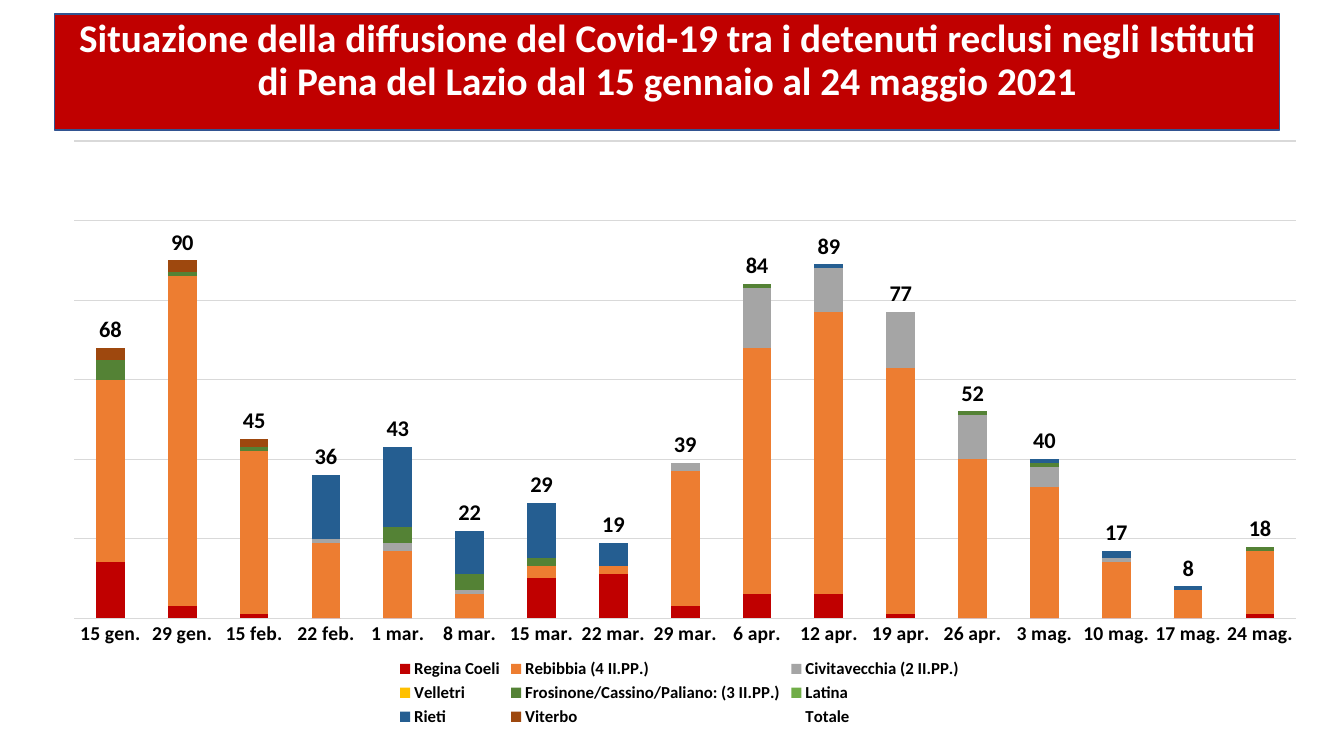
from lxml import etree
from pptx import Presentation
from pptx import util as u
from pptx.chart.data import CategoryChartData
from pptx.dml.color import RGBColor
from pptx.enum import chart as ch, shapes, text
from pptx.oxml import ns

DATES = ["15 gen.", "29 gen.", "15 feb.", "22 feb.", "1 mar.", "8 mar.",
         "15 mar.", "22 mar.", "29 mar.", "6 apr.", "12 apr.", "19 apr.",
         "26 apr.", "3 mag.", "10 mag.", "17 mag.", "24 mag."]
NONE = [0] * len(DATES)
PRISONS = [
    ("Regina Coeli", "C00000", [14, 3, 1, 0, 0, 0, 10, 11, 3, 6, 6, 1, 0, 0, 0, 0, 1]),
    ("Rebibbia (4 II.PP.)", "ED7D31",
     [46, 83, 41, 19, 17, 6, 3, 2, 34, 62, 71, 62, 40, 33, 14, 7, 16]),
    ("Civitavecchia (2 II.PP.)", "A5A5A5",
     [0, 0, 0, 1, 2, 1, 0, 0, 2, 15, 11, 14, 11, 5, 1, 0, 0]),
    ("Velletri", "FFC000", NONE),
    ("Frosinone/Cassino/Paliano: (3 II.PP.)", "548235",
     [5, 1, 1, 0, 4, 4, 2, 0, 0, 1, 0, 0, 1, 1, 0, 0, 1]),
    ("Latina", "70AD47", NONE),
    ("Rieti", "255E91", [0, 0, 0, 16, 20, 11, 14, 6, 0, 0, 1, 0, 0, 1, 2, 1, 0]),
    ("Viterbo", "9E480E", [3, 3, 2] + [0] * 14),
]
TOTALS = [sum(day) for day in zip(*(vals for _, _, vals in PRISONS))]


def rgb(value):
    return RGBColor.from_string(value)


class Deck:
    font = "Calibri"
    grid = "D9D9D9"

    def __init__(self):
        self.prs = Presentation()
        self.prs.slide_width = u.Inches(13.33)
        self.prs.slide_height = u.Inches(7.5)
        self.s = self.prs.slides.add_slide(self.prs.slide_layouts[6])

    def style(self, font, size, color="000000", bold=True):
        font.name = self.font
        font.size = u.Pt(size)
        font.bold = bold
        font.color.rgb = rgb(color)

    def rule(self, line):
        line.color.rgb = rgb(self.grid)
        line.width = u.Pt(0.75)

    def banner(self, words, *box):
        sp = self.s.shapes.add_shape(shapes.MSO_SHAPE.RECTANGLE, *map(u.Inches, box))
        sp.shadow.inherit = False
        sp.fill.solid()
        sp.fill.fore_color.rgb = rgb("C00000")
        sp.line.color.rgb = rgb("325491")
        sp.line.width = u.Pt(1)
        tf = sp.text_frame
        tf.word_wrap = True
        tf.vertical_anchor = text.MSO_ANCHOR.TOP
        tf.text = words
        p = tf.paragraphs[0]
        p.alignment = text.PP_ALIGN.CENTER
        p.line_spacing = 0.9
        p.space_before = u.Pt(10)
        self.style(p.runs[0].font, 28, "FFFFFF")

    def stacked_chart(self, dates, parts, totals, *box):
        data = CategoryChartData()
        data.categories = dates
        for name, _, vals in parts:
            data.add_series(name, vals)
        data.add_series("Totale", totals)
        chart = self.s.shapes.add_chart(
            ch.XL_CHART_TYPE.COLUMN_STACKED, *map(u.Inches, box), data).chart
        chart.has_title = False
        self.style(chart.font, 10, bold=False)
        plot = chart.plots[0]
        plot.gap_width = 150
        plot.overlap = 100
        plot.vary_by_categories = False
        *bars, total = plot.series
        for bar, (_, color, _) in zip(bars, parts):
            bar.format.fill.solid()
            bar.format.fill.fore_color.rgb = rgb(color)
        total.format.fill.background()
        total.format.line.fill.background()
        labels = total.data_labels
        labels.show_value = True
        labels.position = ch.XL_LABEL_POSITION.INSIDE_BASE
        self.style(labels.font, 16)
        self.axes(chart)
        chart.has_legend = True
        chart.legend.position = ch.XL_LEGEND_POSITION.BOTTOM
        chart.legend.include_in_layout = False
        self.style(chart.legend.font, 12)
        self.place_plot(chart, x=0.016, y=0.02, w=0.977, h=0.793)

    def axes(self, chart):
        cat = chart.category_axis
        cat.major_tick_mark = cat.minor_tick_mark = ch.XL_TICK_MARK.NONE
        self.rule(cat.format.line)
        self.style(cat.tick_labels.font, 14)
        val = chart.value_axis
        val.minimum_scale, val.maximum_scale, val.major_unit = 0, 120, 20
        val.has_major_gridlines = True
        self.rule(val.major_gridlines.format.line)
        val.visible = False

    def place_plot(self, chart, **area):
        plot_area = chart.plots[0]._element.getparent()
        for old in plot_area.findall(ns.qn("c:layout")):
            plot_area.remove(old)
        layout = etree.Element(ns.qn("c:layout"))
        manual = etree.SubElement(layout, ns.qn("c:manualLayout"))
        settings = dict(layoutTarget="inner", xMode="edge", yMode="edge", **area)
        for tag, value in settings.items():
            etree.SubElement(manual, ns.qn("c:" + tag), val=str(value))
        plot_area.insert(0, layout)


def main():
    deck = Deck()
    deck.banner("Situazione della diffusione del Covid-19 tra i detenuti reclusi "
                "negli Istituti di Pena del Lazio dal 15 gennaio al 24 maggio 2021",
                0.54, 0.14, 12.15, 1.15)
    deck.stacked_chart(DATES, PRISONS, TOTALS, 0.54, 1.28, 12.4, 5.97)
    deck.prs.save("out.pptx")


if __name__ == "__main__":
    main()
